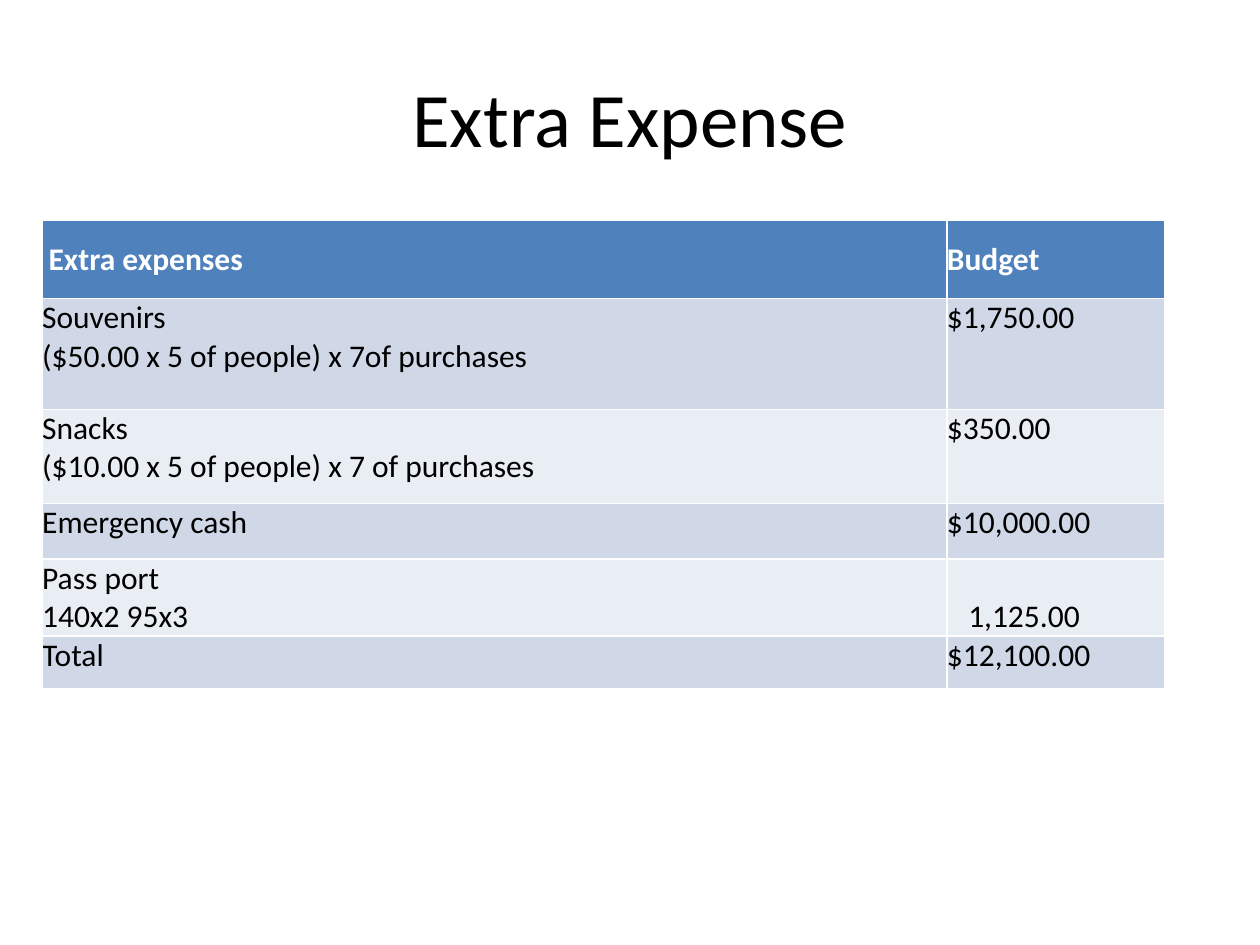
from dataclasses import dataclass

from pptx import Presentation
from pptx.dml.color import RGBColor
from pptx.enum import text as t
from pptx.util import Cm, Pt


@dataclass(frozen=True)
class Theme:
    font: str = "Calibri"
    ink: str = "000000"
    white: str = "FFFFFF"
    head: str = "4F81BD"
    bands: tuple = ("D0D8E8", "E9EDF4")
    title: int = 44
    body: int = 18


THEME = Theme()
COLS = (18.24, 4.39)
# Row height in cm, expense, budget
ROWS = (
    (1.57, "Extra expenses", "Budget"),
    (2.23, "Souvenirs\n($50.00 x 5 of people) x 7of purchases", "$1,750.00"),
    (1.9, "Snacks\n($10.00 x 5 of people) x 7 of purchases", "$350.00"),
    (1.12, "Emergency cash", "$10,000.00"),
    (1.55, "Pass port\n140x2 95x3", "1,125.00"),
    (1.06, "Total", "$12,100.00"),
)


def style(frame, size, color, bold=False):
    """Format every run in a text frame."""
    for para in frame.paragraphs:
        for run in para.runs:
            font = run.font
            font.name, font.size, font.bold = THEME.font, Pt(size), bold
            font.color.rgb = RGBColor.from_string(color)


def add_title(slide, words):
    title = slide.shapes.title
    title.left, title.top = Cm(1.27), Cm(0.76)
    title.width, title.height = Cm(22.86), Cm(3.18)
    frame = title.text_frame
    frame.text = words
    frame.vertical_anchor = t.MSO_ANCHOR.MIDDLE
    frame.paragraphs[0].alignment = t.PP_ALIGN.CENTER
    style(frame, THEME.title, THEME.ink)


def fill_cell(cell, words, row):
    head = row == 0
    cell.margin_left = cell.margin_right = 0
    cell.margin_top = cell.margin_bottom = 0
    cell.vertical_anchor = t.MSO_ANCHOR.MIDDLE if head else t.MSO_ANCHOR.TOP
    cell.fill.solid()
    shade = THEME.head if head else THEME.bands[(row - 1) % 2]
    cell.fill.fore_color.rgb = RGBColor.from_string(shade)
    cell.text_frame.text = words
    style(cell.text_frame, THEME.body, THEME.white if head else THEME.ink, head)


def add_costs(slide):
    high = sum(row[0] for row in ROWS)
    table = slide.shapes.add_table(
        len(ROWS), len(COLS), Cm(0.85), Cm(4.45), Cm(sum(COLS)), Cm(high)
    ).table
    for col, wide in zip(table.columns, COLS):
        col.width = Cm(wide)
    for i, (tall, *words) in enumerate(ROWS):
        table.rows[i].height = Cm(tall)
        for j, word in enumerate(words):
            fill_cell(table.cell(i, j), word, i)

    # Indented heading, and a passport cost level with its second line
    table.cell(0, 0).margin_left = Cm(0.13)
    cost = table.cell(4, 1)
    cost.margin_left = Cm(0.43)
    cost.vertical_anchor = t.MSO_ANCHOR.BOTTOM


def main():
    deck = Presentation()
    deck.slide_width, deck.slide_height = Cm(25.4), Cm(19.05)
    slide = deck.slides.add_slide(deck.slide_layouts[5])
    add_title(slide, "Extra Expense")
    add_costs(slide)
    deck.save("out.pptx")


if __name__ == "__main__":
    main()
